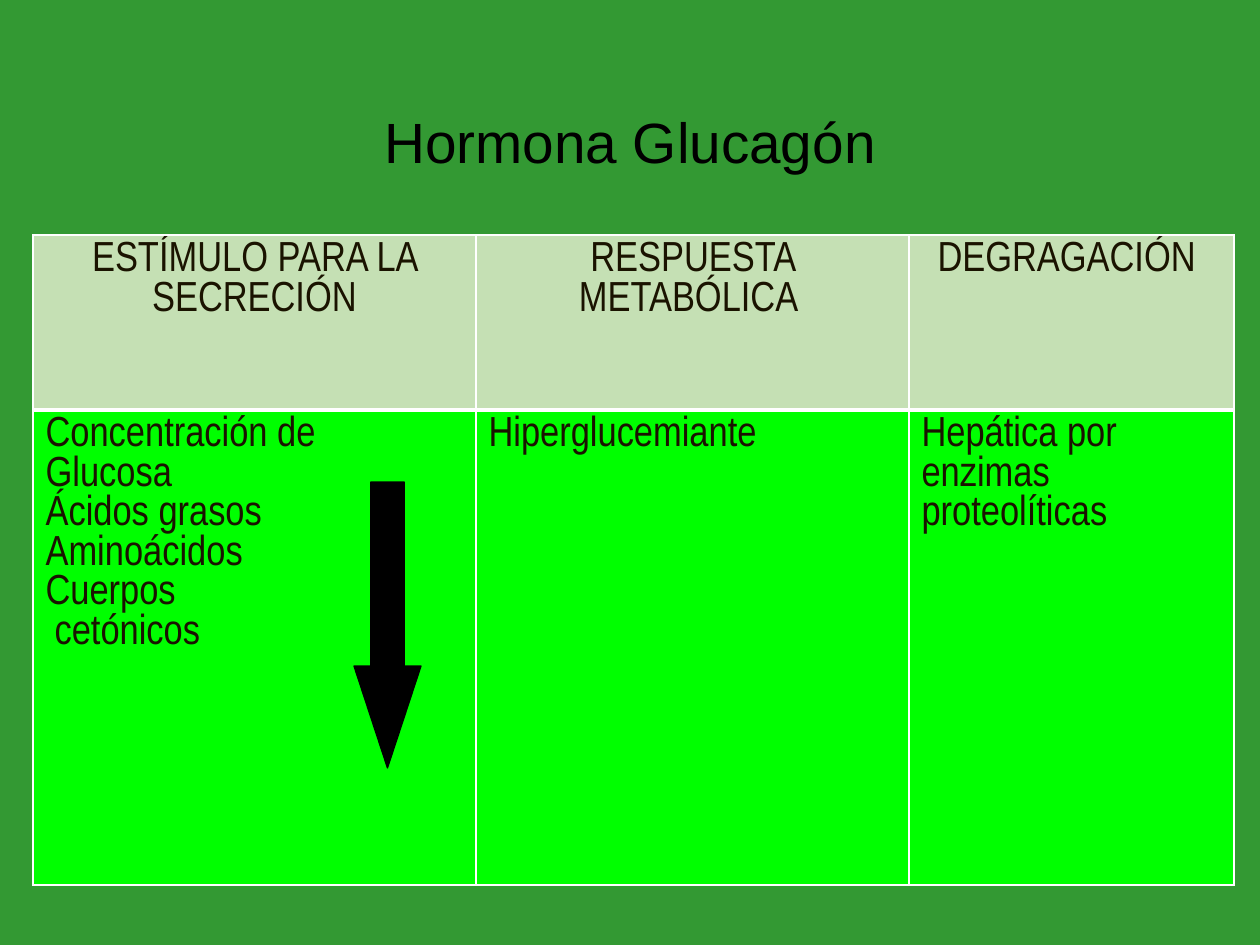
import pptx
import pptx.util
import pptx.dml.color
import pptx.enum.shapes
import pptx.enum.text
import pptx.oxml
from lxml import etree

RGBColor = pptx.dml.color.RGBColor
ALIGN = pptx.enum.text.PP_ALIGN
ANCHOR = pptx.enum.text.MSO_ANCHOR

PAGE_GREEN = RGBColor(0x33, 0x99, 0x33)
HEADER_GREEN = RGBColor(0xC5, 0xE0, 0xB4)
BODY_GREEN = RGBColor(0x00, 0xFF, 0x00)
CELL_INK = RGBColor(0x1A, 0x13, 0x00)
BLACK = RGBColor(0, 0, 0)
WHITE = RGBColor(0xFF, 0xFF, 0xFF)

TITLE = "Hormona Glucagón"
HEADERS = ["ESTÍMULO PARA LA SECRECIÓN", "RESPUESTA METABÓLICA ", "DEGRAGACIÓN "]
# A vertical tab is a line break inside a paragraph.
DETAILS = [
    ["Concentración de\vGlucosa", "Ácidos grasos", "Aminoácidos", "Cuerpos", "cetónicos"],
    ["Hiperglucemiante"],
    ["Hepática por enzimas proteolíticas"],
]
COLUMN_WIDTHS = [443, 433, 325]
ROW_HEIGHTS = [175, 475]
TABLE_LEFT, TABLE_TOP = 33, 235
CONTINUATION_INDENT = 9


def px(length):
    """Turn px, at 126 to the inch, into EMU."""
    return pptx.util.Emu(round(length * 914400 / 126))


def write(frame, lines, *, font, size, color, align=ALIGN.LEFT, spacing=None):
    frame.word_wrap = True
    frame.text = "\n".join(lines)
    for paragraph in frame.paragraphs:
        paragraph.alignment = align
        paragraph.line_spacing = spacing
        paragraph.font.name = font
        paragraph.font.size = pptx.util.Pt(size)
        paragraph.font.color.rgb = color
        paragraph.font.bold = False


def style_cell(cell, fill, bottom_width):
    properties = cell._tc.get_or_add_tcPr()
    for side, width in zip("LRTB", (1, 1, 1, bottom_width)):
        border = etree.SubElement(properties, pptx.oxml.ns.qn(f"a:ln{side}"),
                                  w=str(pptx.util.Pt(width)))
        solid = etree.SubElement(border, pptx.oxml.ns.qn("a:solidFill"))
        etree.SubElement(solid, pptx.oxml.ns.qn("a:srgbClr"), val=str(WHITE))
    cell.fill.solid()
    cell.fill.fore_color.rgb = fill


def add_hormone_table(slide):
    table = slide.shapes.add_table(
        len(ROW_HEIGHTS), len(COLUMN_WIDTHS), px(TABLE_LEFT), px(TABLE_TOP),
        px(sum(COLUMN_WIDTHS)), px(sum(ROW_HEIGHTS))).table
    for row, height in zip(table.rows, ROW_HEIGHTS):
        row.height = px(height)
    for index, width in enumerate(COLUMN_WIDTHS):
        table.columns[index].width = px(width)
        header, detail = table.cell(0, index), table.cell(1, index)
        write(header.text_frame, [HEADERS[index]], font="Arial Narrow", size=24,
              color=CELL_INK, align=ALIGN.CENTER)
        write(detail.text_frame, DETAILS[index], font="Arial Narrow", size=24,
              color=CELL_INK)
        style_cell(header, HEADER_GREEN, bottom_width=3)
        style_cell(detail, BODY_GREEN, bottom_width=1)
    continuation = table.cell(1, 0).text_frame.paragraphs[-1]
    continuation._p.get_or_add_pPr().set("marL", str(px(CONTINUATION_INDENT)))


def add_decrease_arrow(slide):
    arrow = slide.shapes.add_shape(pptx.enum.shapes.MSO_SHAPE.DOWN_ARROW,
                                   px(354), px(482), px(67), px(286))
    arrow.adjustments[0] = 0.5
    arrow.adjustments[1] = 1.52
    arrow.shadow.inherit = False
    arrow.fill.solid()
    arrow.fill.fore_color.rgb = BLACK
    arrow.line.color.rgb = BLACK
    arrow.line.width = pptx.util.Pt(0.75)


def main():
    deck = pptx.Presentation()
    deck.slide_width, deck.slide_height = px(1260), px(945)
    slide = deck.slides.add_slide(deck.slide_layouts[5])
    slide.background.fill.solid()
    slide.background.fill.fore_color.rgb = PAGE_GREEN

    title = slide.shapes.title
    title.left, title.top, title.width, title.height = px(87), px(50), px(1086), px(128)
    write(title.text_frame, [TITLE], font="Arial", size=32.4, color=BLACK,
          align=ALIGN.CENTER, spacing=0.9)
    title.text_frame.auto_size = pptx.enum.text.MSO_AUTO_SIZE.NONE
    title.text_frame.vertical_anchor = ANCHOR.BOTTOM
    title.text_frame.margin_bottom = px(2)

    add_hormone_table(slide)
    add_decrease_arrow(slide)
    deck.save("out.pptx")


if __name__ == "__main__":
    main()
